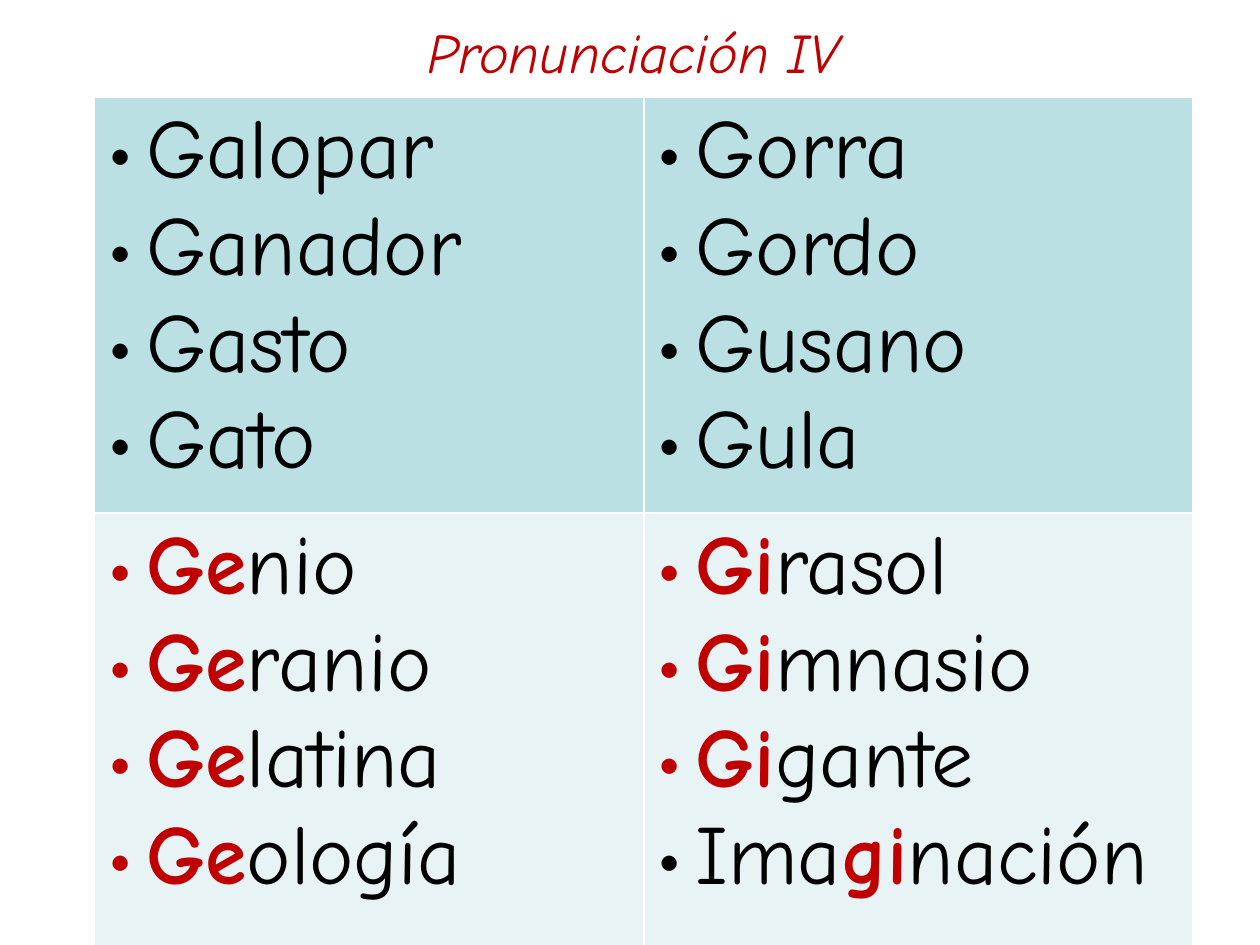
import pptx
import pptx.dml.color
import pptx.enum.text
import pptx.oxml
import pptx.oxml.ns
import pptx.util
from dataclasses import dataclass

Inches = pptx.util.Inches
Pt = pptx.util.Pt
NS = pptx.oxml.ns.nsdecls("a")


@dataclass(frozen=True)
class Theme:
    font: str = "Comic Neue"
    ink: str = "000000"
    red: str = "C00000"
    rule: str = "FFFFFF"
    bands: tuple = ("BBE0E3", "E7F3F4")
    title: int = 32
    body: int = 48


THEME = Theme()

# Asterisks enclose the stressed letters of a word
WORDS = [
    [["Galopar", "Ganador", "Gasto", "Gato"],
     ["Gorra", "Gordo", "Gusano", "Gula"]],
    [["*Ge*nio", "*Ge*ranio", "*Ge*latina", "*Ge*ología"],
     ["*Gi*rasol", "*Gi*mnasio", "*Gi*gante", "Ima*gi*nación"]],
]
ROWS = (3.3, 4.9)


def rgb(code):
    return pptx.dml.color.RGBColor.from_string(code)


def add_run(para, text, color, **format):
    run = para.add_run()
    run.text = text
    for name, value in {"name": THEME.font, **format}.items():
        setattr(run.font, name, value)
    run.font.color.rgb = rgb(color)


def add_title(slide, text):
    box = slide.shapes.add_textbox(Inches(0.53), Inches(0.02), Inches(9), Inches(0.77))
    frame = box.text_frame
    frame.word_wrap = True
    frame.vertical_anchor = pptx.enum.text.MSO_ANCHOR.MIDDLE
    para = frame.paragraphs[0]
    para.alignment = pptx.enum.text.PP_ALIGN.CENTER
    add_run(para, text, THEME.red, size=Pt(THEME.title), italic=True)


def set_bullet(para, color):
    props = para._p.get_or_add_pPr()
    props.set("marL", str(Inches(0.31)))
    props.set("indent", str(-Inches(0.31)))
    for xml in (f'<a:buClr {NS}><a:srgbClr val="{color}"/></a:buClr>',
                f'<a:buFont {NS} typeface="{THEME.font}"/>',
                f'<a:buChar {NS} char="•"/>'):
        props.append(pptx.oxml.parse_xml(xml))


def add_word(para, word):
    set_bullet(para, THEME.red if word.startswith("*") else THEME.ink)
    for i, part in enumerate(word.split("*")):
        if part:
            strong = i % 2 == 1
            add_run(para, part, THEME.red if strong else THEME.ink,
                    size=Pt(THEME.body), bold=strong)


def set_edges(cell):
    props = cell._tc.get_or_add_tcPr()
    for i, side in enumerate(("lnL", "lnR", "lnT", "lnB")):
        props.insert(i, pptx.oxml.parse_xml(
            f'<a:{side} {NS} w="{Pt(1)}"><a:solidFill>'
            f'<a:srgbClr val="{THEME.rule}"/></a:solidFill></a:{side}>'))


def fill_cell(cell, words, color):
    cell.fill.solid()
    cell.fill.fore_color.rgb = rgb(color)
    set_edges(cell)
    frame = cell.text_frame
    for i, word in enumerate(words):
        add_word(frame.add_paragraph() if i else frame.paragraphs[0], word)


def add_words(slide):
    table = slide.shapes.add_table(2, 2, Inches(0.75), Inches(0.77),
                                   Inches(8.72), Inches(sum(ROWS))).table
    for r, (height, color) in enumerate(zip(ROWS, THEME.bands)):
        table.rows[r].height = Inches(height)
        for c, words in enumerate(WORDS[r]):
            fill_cell(table.cell(r, c), words, color)


def main():
    deck = pptx.Presentation()
    deck.slide_width, deck.slide_height = Inches(10), Inches(7.5)
    slide = deck.slides.add_slide(deck.slide_layouts[6])
    add_title(slide, "Pronunciación IV")
    add_words(slide)
    deck.save("out.pptx")


if __name__ == "__main__":
    main()
